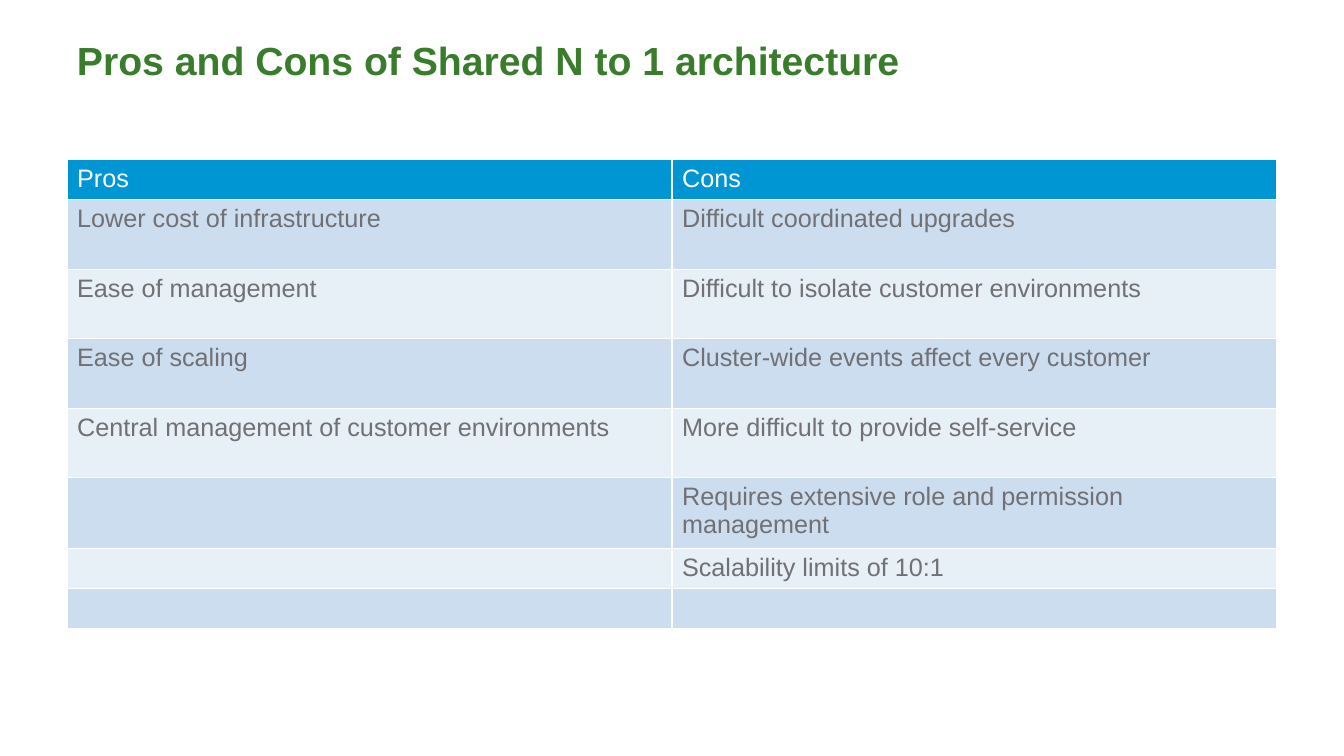
from lxml.etree import SubElement
from pptx import Presentation
from pptx.dml.color import RGBColor
from pptx.oxml.ns import qn
from pptx.util import Inches, Pt

TITLE = "Pros and Cons of Shared N to 1 architecture"
ROWS = [
    (0.4, "Pros", "Cons"),
    (0.69, "Lower cost of infrastructure", "Difficult coordinated upgrades"),
    (0.69, "Ease of management", "Difficult to isolate customer environments"),
    (0.69, "Ease of scaling", "Cluster-wide events affect every customer"),
    (0.69, "Central management of customer environments", "More difficult to provide self-service"),
    (0.7, "", "Requires extensive role and permission management"),
    (0.4, "", "Scalability limits of 10:1"),
    (0.4, "", ""),
]
COLORS = {
    "title": "387C2C",
    "header": "0095D3",
    "odd": "CCDDEF",
    "even": "E7EFF7",
    "text": "717074",
    "white": "FFFFFF",
}
FONT = "Arial"
SLIDE_WIDTH, SLIDE_HEIGHT = 13.33, 7.5
CONTENT_WIDTH = 12
LEFT = (SLIDE_WIDTH - CONTENT_WIDTH) / 2
TITLE_TOP, TITLE_HEIGHT = 0.36, 0.89
TABLE_TOP = 1.58


def format_text(text_frame, size, color, bold):
    for paragraph in text_frame.paragraphs:
        for run in paragraph.runs:
            run.font.name = FONT
            run.font.size = Pt(size)
            run.font.bold = bold
            run.font.color.rgb = RGBColor.from_string(COLORS[color])


def add_borders(cell):
    properties = cell._tc.get_or_add_tcPr()
    for side in ("a:lnL", "a:lnR", "a:lnT", "a:lnB"):
        line = SubElement(properties, qn(side), w=str(Pt(1)))
        fill = SubElement(line, qn("a:solidFill"))
        SubElement(fill, qn("a:srgbClr"), val=COLORS["white"])


def add_title(slide):
    box = slide.shapes.add_textbox(
        Inches(LEFT), Inches(TITLE_TOP), Inches(CONTENT_WIDTH), Inches(TITLE_HEIGHT))
    text_frame = box.text_frame
    text_frame.word_wrap = True
    text_frame.text = TITLE
    text_frame.paragraphs[0].line_spacing = 0.9
    format_text(text_frame, 28, "title", True)


def add_comparison(slide):
    height = sum(row[0] for row in ROWS)
    table = slide.shapes.add_table(
        len(ROWS), 2, Inches(LEFT), Inches(TABLE_TOP),
        Inches(CONTENT_WIDTH), Inches(height)).table
    for row_index, (row_height, *texts) in enumerate(ROWS):
        table.rows[row_index].height = Inches(row_height)
        band = "header" if row_index == 0 else ("even", "odd")[row_index % 2]
        for column_index, text in enumerate(texts):
            cell = table.cell(row_index, column_index)
            add_borders(cell)
            cell.fill.solid()
            cell.fill.fore_color.rgb = RGBColor.from_string(COLORS[band])
            cell.text_frame.text = text
            format_text(cell.text_frame, 18, "white" if row_index == 0 else "text", False)


def main():
    presentation = Presentation()
    presentation.slide_width = Inches(SLIDE_WIDTH)
    presentation.slide_height = Inches(SLIDE_HEIGHT)
    slide = presentation.slides.add_slide(presentation.slide_layouts[6])
    add_title(slide)
    add_comparison(slide)
    presentation.save("out.pptx")


if __name__ == "__main__":
    main()
